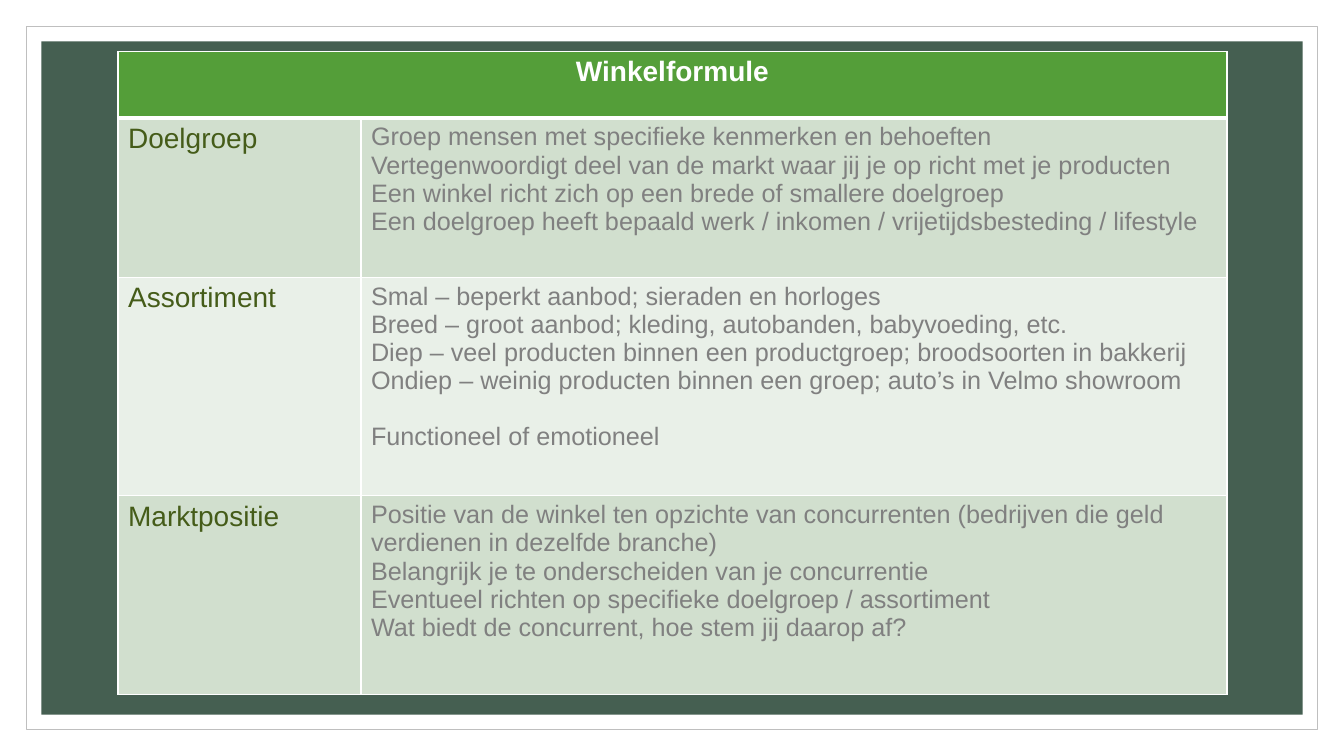
from lxml.etree import SubElement as Sub
from pptx import Presentation
from pptx.dml.color import RGBColor as Rgb
from pptx.enum.shapes import MSO_SHAPE as Kind
from pptx.enum.text import PP_ALIGN as Align
from pptx.oxml.ns import qn
from pptx.util import Inches, Pt

TITLE = "Winkelformule"
ROWS = [
    ("Doelgroep", [
        "Groep mensen met specifieke kenmerken en behoeften",
        "Vertegenwoordigt deel van de markt waar jij je op richt met je producten",
        "Een winkel richt zich op een brede of smallere doelgroep",
        "Een doelgroep heeft bepaald werk / inkomen / vrijetijdsbesteding / lifestyle",
    ], []),
    ("Assortiment", [
        "Smal – beperkt aanbod; sieraden en horloges",
        "Breed – groot aanbod; kleding, autobanden, babyvoeding, etc.",
        "Diep – veel producten binnen een productgroep; broodsoorten in bakkerij",
        "Ondiep – weinig producten binnen een groep; auto’s in Velmo showroom",
    ], ["Functioneel of emotioneel"]),
    ("Marktpositie", [
        "Positie van de winkel ten opzichte van concurrenten "
        "(bedrijven die geld verdienen in dezelfde branche)",
        "Belangrijk je te onderscheiden van je concurrentie",
        "Eventueel richten op specifieke doelgroep / assortiment",
        "Wat biedt de concurrent, hoe stem jij daarop af?",
    ], []),
]

SIZE = (13.33, 7.5)
THEME = {
    "font": "Arial",
    "edge": "BFBFBF",
    "white": "FFFFFF",
    "panel": "455F51",
    "head": "549E39",
    "bands": ("D1DFCE", "E9F0E8"),
    "title": {"size": Pt(20), "bold": True, "color": "FFFFFF"},
    "label": {"size": Pt(20), "bold": False, "color": "455C19"},
    "body": {"size": Pt(18), "bold": False, "color": "808080"},
}
FRAMES = [(0.26, THEME["white"], THEME["edge"]), (0.41, THEME["panel"], None)]
SPOT = (1.17, 0.51, 11, 6.44)
COLS = (2.41, 8.59)
HIGHS = (0.66, 1.58, 2.17, 1.97)
GAP = Pt(20)


def paint(part, color):
    part.fill.solid()
    part.fill.fore_color.rgb = Rgb.from_string(color)


def frame(slide, inset, color, edge):
    wide, high = (side - 2 * inset for side in SIZE)
    box = slide.shapes.add_shape(
        Kind.RECTANGLE, *map(Inches, (inset, inset, wide, high)))
    box.shadow.inherit = False
    paint(box, color)
    if edge:
        box.line.color.rgb = Rgb.from_string(edge)
        box.line.width = Pt(0.5)
    else:
        box.line.fill.background()


def write(cell, lines, style, align=Align.LEFT, gaps=()):
    text = cell.text_frame
    for i, line in enumerate(lines):
        para = text.add_paragraph() if i else text.paragraphs[0]
        para.alignment = align
        if i in gaps:
            para.space_before = GAP
        run = para.add_run()
        run.text = line
        run.font.name = THEME["font"]
        for key, value in THEME[style].items():
            if key == "color":
                run.font.color.rgb = Rgb.from_string(value)
            else:
                setattr(run.font, key, value)


def rule(cell, row):
    props = cell._tc.get_or_add_tcPr()
    heavy = {(0, "B"), (1, "T")}
    for side in "LRTB":
        width = Pt(3 if (row, side) in heavy else 1)
        line = Sub(props, qn("a:ln" + side), w=str(width))
        fill = Sub(line, qn("a:solidFill"))
        Sub(fill, qn("a:srgbClr"), val=THEME["white"])


def build(slide):
    table = slide.shapes.add_table(
        len(HIGHS), len(COLS), *map(Inches, SPOT)).table
    table.first_row = table.horz_banding = False
    for col, wide in zip(table.columns, COLS):
        col.width = Inches(wide)
    for i, (row, high) in enumerate(zip(table.rows, HIGHS)):
        row.height = Inches(high)
        for cell in row.cells:
            rule(cell, i)
            paint(cell, THEME["bands"][(i - 1) % 2] if i else THEME["head"])
    top = table.cell(0, 0)
    top.merge(table.cell(0, 1))
    write(top, [TITLE], "title", Align.CENTER)
    for i, (label, lines, more) in enumerate(ROWS, 1):
        write(table.cell(i, 0), [label], "label")
        write(table.cell(i, 1), lines + more, "body", gaps=(len(lines),))


def main():
    deck = Presentation()
    deck.slide_width, deck.slide_height = map(Inches, SIZE)
    slide = deck.slides.add_slide(deck.slide_layouts[6])
    for inset, color, edge in FRAMES:
        frame(slide, inset, color, edge)
    build(slide)
    deck.save("out.pptx")


if __name__ == "__main__":
    main()
